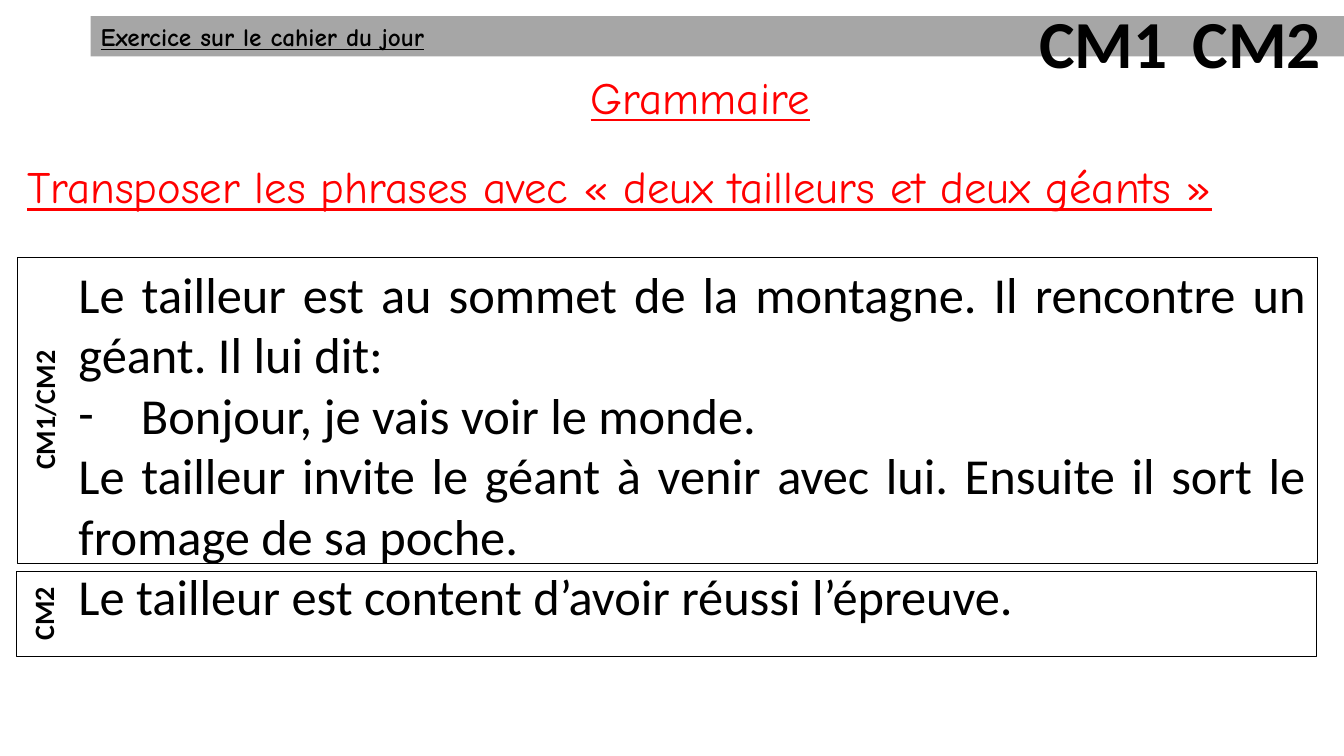
from dataclasses import dataclass
from typing import Optional

import lxml.etree
import pptx
import pptx.dml.color
import pptx.enum.shapes
import pptx.enum.text
import pptx.oxml.ns
import pptx.util

EMU_PER_PX = 9144
Align = pptx.enum.text.PP_ALIGN


@dataclass(frozen=True)
class Theme:
    ink: str = "000000"
    heading: str = "FF0000"
    bar: str = "A6A6A6"
    halo: str = "F2F2F2"
    handwriting: str = "Comic Neue"
    print_font: str = "Calibri"
    instruction_size: int = 18
    label_size: int = 20
    heading_size: int = 32
    body_size: int = 36
    level_size: int = 48
    frame_line: float = 0.75
    halo_line: float = 0.8


THEME = Theme()


@dataclass(frozen=True)
class Box:
    left: int
    top: int
    width: int
    height: int


@dataclass(frozen=True)
class TextStyle:
    font: str
    size: int
    color: str = THEME.ink
    bold: bool = False
    underline: bool = False
    align: Align = Align.JUSTIFY
    halo: bool = False


@dataclass(frozen=True)
class TextBlock:
    box: Box
    lines: tuple[str, ...]
    style: TextStyle
    dashed_line: Optional[int] = None


@dataclass(frozen=True)
class Panel:
    box: Box
    text: str
    style: TextStyle
    fill: Optional[str] = None
    line: Optional[str] = None
    rotation: int = 0


HEADING = TextStyle(THEME.handwriting, THEME.heading_size, THEME.heading, underline=True)
TITLE = TextStyle(THEME.handwriting, THEME.heading_size, THEME.heading,
                  underline=True, align=Align.CENTER)
INSTRUCTION = TextStyle(THEME.handwriting, THEME.instruction_size, bold=True, underline=True)
BODY = TextStyle(THEME.print_font, THEME.body_size)
LEVEL = TextStyle(THEME.print_font, THEME.level_size, bold=True, align=Align.CENTER, halo=True)
LABEL = TextStyle(THEME.print_font, THEME.label_size, bold=True, align=Align.CENTER, halo=True)

TITLE_BLOCK = TextBlock(Box(164, 64, 1061, 64), ("Grammaire",), TITLE)
INSTRUCTION_BAR = Panel(Box(90, 16, 1244, 40), "Exercice sur le cahier du jour",
                        INSTRUCTION, fill=THEME.bar)
TEXT_BLOCKS = (
    TextBlock(Box(1058, -16, 377, 56), ("CM2",), LEVEL),
    TextBlock(Box(906, -16, 377, 56), ("CM1",), LEVEL),
    TextBlock(Box(68, 256, 1238, 374), (
        "Le tailleur est au sommet de la montagne. Il rencontre un géant. Il lui dit:",
        "Bonjour, je vais voir le monde.",
        "Le tailleur invite le géant à venir avec lui. Ensuite il sort le fromage de sa poche.",
        "Le tailleur est content d’avoir réussi l’épreuve.",
    ), BODY, dashed_line=1),
    TextBlock(Box(17, 153, 1319, 64),
              ("Transposer les phrases avec « deux tailleurs et deux géants »",), HEADING),
)
FRAMES = (
    Panel(Box(510, -238, 304, 1290), "CM1/CM2", LABEL, line=THEME.ink, rotation=270),
    Panel(Box(619, -36, 84, 1290), "CM2", LABEL, line=THEME.ink, rotation=270),
)


def px(value: int) -> pptx.util.Emu:
    return pptx.util.Emu(value * EMU_PER_PX)


def rgb(value: str) -> pptx.dml.color.RGBColor:
    return pptx.dml.color.RGBColor.from_string(value)


def place(shape, box: Box) -> None:
    shape.left, shape.top = px(box.left), px(box.top)
    shape.width, shape.height = px(box.width), px(box.height)


def add_halo(run) -> None:
    qn = pptx.oxml.ns.qn
    outline = lxml.etree.Element(qn("a:ln"), w=str(pptx.util.Pt(THEME.halo_line)))
    fill = lxml.etree.SubElement(outline, qn("a:solidFill"))
    lxml.etree.SubElement(fill, qn("a:srgbClr"), val=THEME.halo)
    run.font._element.insert(0, outline)


def add_dash(paragraph) -> None:
    qn = pptx.oxml.ns.qn
    properties = paragraph._p.get_or_add_pPr()
    indent = px(62)
    properties.set("marL", str(indent))
    properties.set("indent", str(-indent))
    lxml.etree.SubElement(properties, qn("a:buFont"), typeface=THEME.print_font)
    lxml.etree.SubElement(properties, qn("a:buChar"), char="-")


def write_text(shape, lines: tuple[str, ...], style: TextStyle) -> None:
    text_frame = shape.text_frame
    text_frame.text = "\n".join(lines)
    text_frame.word_wrap = True
    text_frame.auto_size = pptx.enum.text.MSO_AUTO_SIZE.NONE
    text_frame.vertical_anchor = pptx.enum.text.MSO_ANCHOR.TOP
    for paragraph in text_frame.paragraphs:
        paragraph.alignment = style.align
        if style.halo:
            paragraph.line_spacing = 1.15
            paragraph.space_after = pptx.util.Pt(10)
        for run in paragraph.runs:
            run.font.name = style.font
            run.font.size = pptx.util.Pt(style.size)
            run.font.bold = style.bold
            run.font.underline = style.underline
            run.font.color.rgb = rgb(style.color)
            if style.halo:
                add_halo(run)


def draw_text(slide, block: TextBlock) -> None:
    shape = slide.shapes.add_textbox(0, 0, 0, 0)
    place(shape, block.box)
    write_text(shape, block.lines, block.style)
    if block.dashed_line is not None:
        add_dash(shape.text_frame.paragraphs[block.dashed_line])


def draw_panel(slide, panel: Panel) -> None:
    shape = slide.shapes.add_shape(pptx.enum.shapes.MSO_SHAPE.RECTANGLE, 0, 0, 0, 0)
    place(shape, panel.box)
    shape.rotation = panel.rotation
    shape.shadow.inherit = False
    if panel.fill:
        shape.fill.solid()
        shape.fill.fore_color.rgb = rgb(panel.fill)
    else:
        shape.fill.background()
    if panel.line:
        shape.line.color.rgb = rgb(panel.line)
        shape.line.width = pptx.util.Pt(THEME.frame_line)
    else:
        shape.line.fill.background()
    write_text(shape, (panel.text,), panel.style)


def main() -> None:
    presentation = pptx.Presentation()
    presentation.slide_width = pptx.util.Inches(13.33)
    presentation.slide_height = pptx.util.Inches(7.5)
    slide = presentation.slides.add_slide(presentation.slide_layouts.get_by_name("Title Only"))
    place(slide.shapes.title, TITLE_BLOCK.box)
    write_text(slide.shapes.title, TITLE_BLOCK.lines, TITLE_BLOCK.style)
    draw_panel(slide, INSTRUCTION_BAR)
    for block in TEXT_BLOCKS:
        draw_text(slide, block)
    for frame in FRAMES:
        draw_panel(slide, frame)
    presentation.save("out.pptx")


if __name__ == "__main__":
    main()
